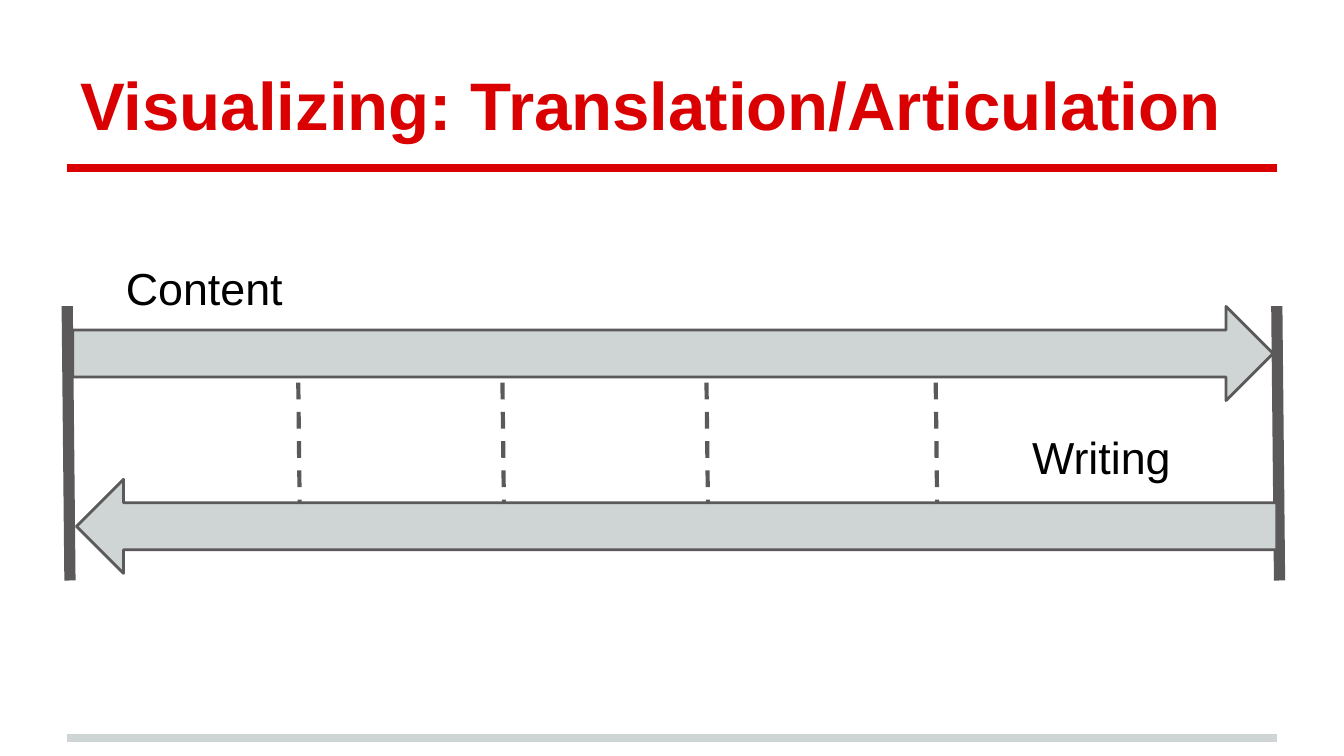
from pptx import Presentation
from pptx.dml.color import RGBColor
from pptx.enum import dml, shapes, text
from pptx.oxml.ns import qn
from pptx.util import Pt
from lxml import etree

RED, GRAY, PALE, BLACK = "DA0002", "5B595A", "CFD4D4", "000000"
LEFT, RIGHT = 36, 684


def color(code):
    return RGBColor.from_string(code)


class Board:
    """Holds the text style and the current slide."""

    font = "Arial"
    inset = 7.2

    def __init__(self, slide):
        self.slide = slide

    def line(self, x1, y1, x2, y2, tint, width, dash=False):
        link = self.slide.shapes.add_connector(
            shapes.MSO_CONNECTOR.STRAIGHT, Pt(x1), Pt(y1), Pt(x2), Pt(y2))
        link.line.color.rgb = color(tint)
        link.line.width = Pt(width)
        if dash:
            link.line.dash_style = dml.MSO_LINE.DASH
        etree.SubElement(link._element.spPr, qn("a:effectLst"))

    def arrow(self, kind, x, y, w, h):
        shape = self.slide.shapes.add_shape(kind, Pt(x), Pt(y), Pt(w), Pt(h))
        shape.shadow.inherit = False
        shape.fill.solid()
        shape.fill.fore_color.rgb = color(PALE)
        shape.line.color.rgb = color(GRAY)
        shape.line.width = Pt(1.5)

    def text(self, words, x, y, w, h, size=24, tint=BLACK, bold=False,
             anchor=text.MSO_ANCHOR.TOP):
        box = self.slide.shapes.add_textbox(Pt(x), Pt(y), Pt(w), Pt(h))
        frame = box.text_frame
        frame.word_wrap = True
        frame.vertical_anchor = anchor
        frame.margin_left = frame.margin_right = Pt(self.inset)
        frame.margin_top = frame.margin_bottom = Pt(self.inset)
        run = frame.paragraphs[0].add_run()
        run.text = words
        run.font.name = self.font
        run.font.size = Pt(size)
        run.font.bold = bold
        run.font.color.rgb = color(tint)


def main():
    deck = Presentation()
    deck.slide_width, deck.slide_height = Pt(720), Pt(405)
    board = Board(deck.slides.add_slide(deck.slide_layouts[6]))

    for y, tint in ((395.3, PALE), (90, RED)):
        board.line(LEFT, y, RIGHT, y, tint, 4)
    board.text("Visualizing: Translation/Articulation", LEFT, 16.5, 648, 67.7,
               size=36, tint=RED, bold=True, anchor=text.MSO_ANCHOR.BOTTOM)

    for x in (RIGHT, LEFT):
        board.line(x, 164, x + 1.5, 311, GRAY, 6)
    board.arrow(shapes.MSO_SHAPE.RIGHT_ARROW, 39, 164.2, 643, 50.4)
    board.arrow(shapes.MSO_SHAPE.LEFT_ARROW, 41, 256.8, 643, 50.4)

    for words, x, y in (("Content", 60.3, 132.5), ("Writing", 545.8, 223)):
        board.text(words, x, y, 118.8, 46.8)

    for x in (501.3, 378.5, 269.2, 159.8):
        board.line(x, 205, x + 0.75, 270, GRAY, 2.25, dash=True)

    deck.save("out.pptx")


if __name__ == "__main__":
    main()
